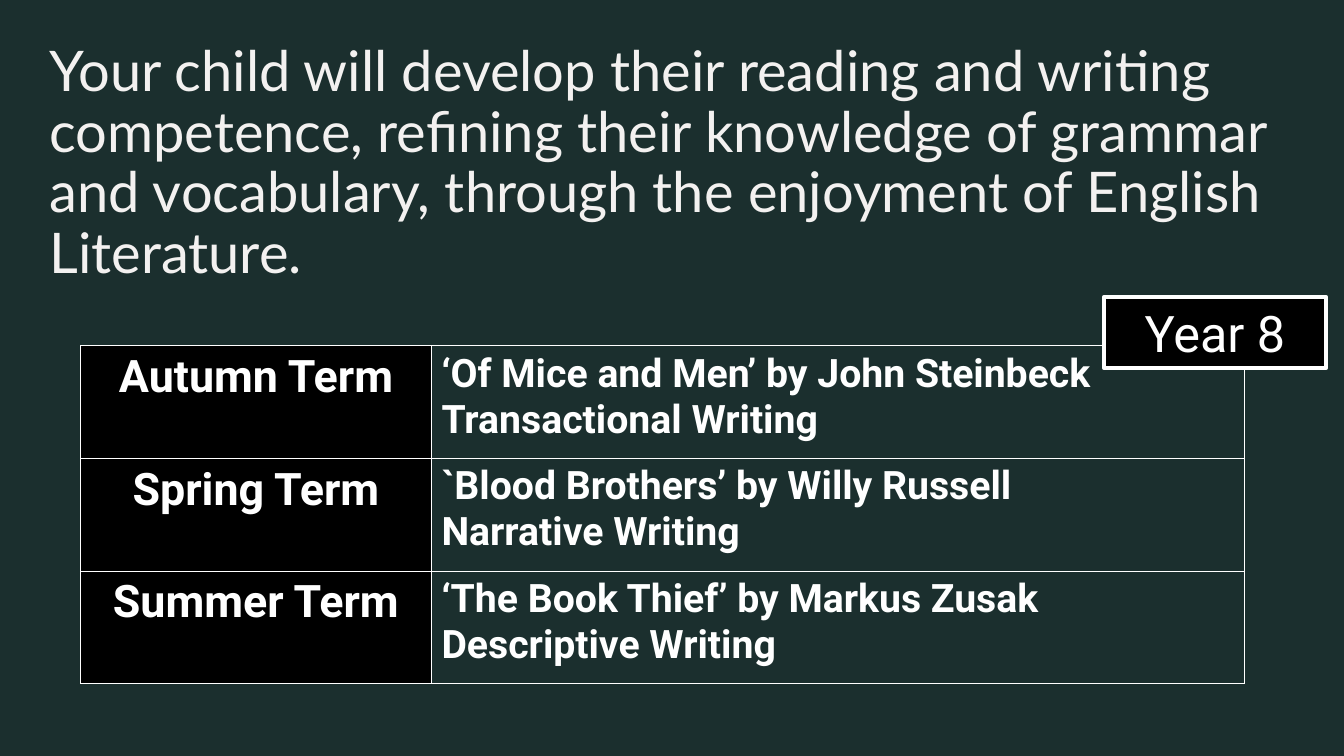
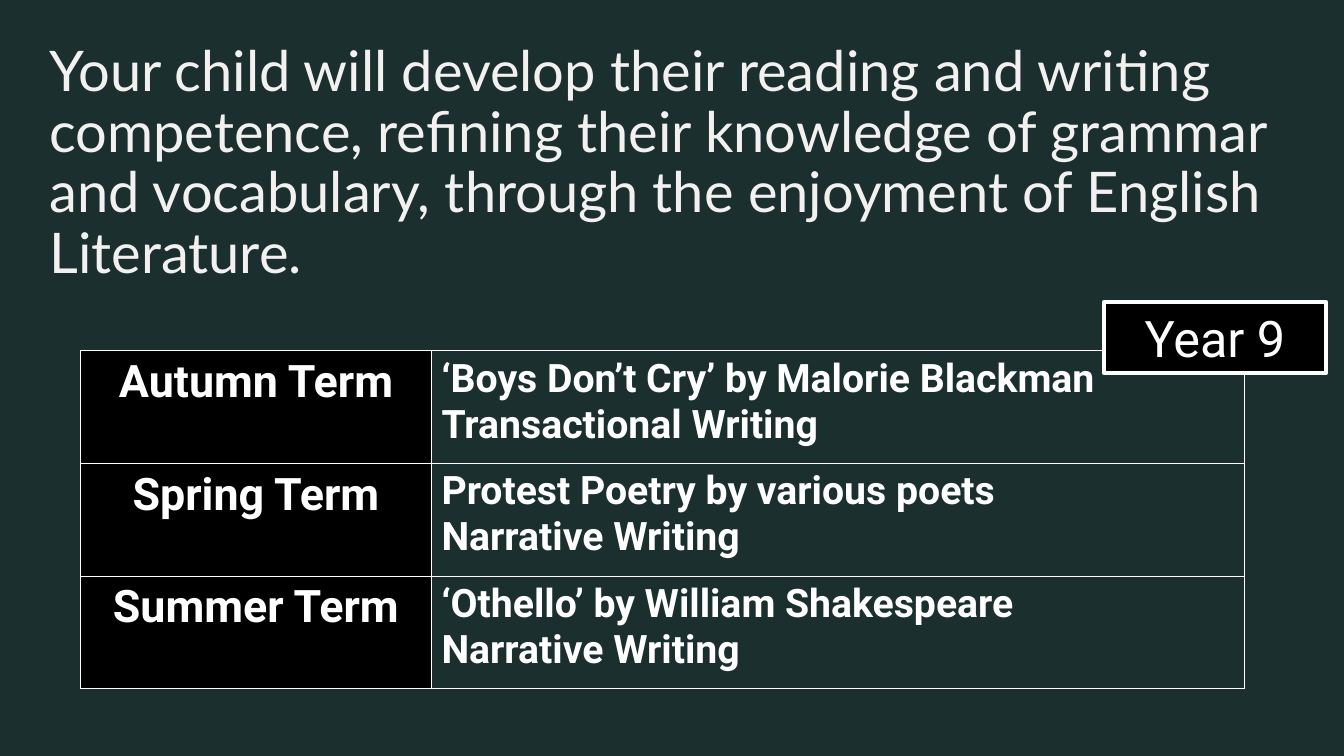
"""Build two slides that set out the English curriculum for Years 8 and 9."""
from lxml import etree
from pptx import Presentation
from pptx import util as u
from pptx.dml.color import RGBColor
from pptx.enum import shapes, text
from pptx.oxml import ns

BACKGROUND, CREAM, WHITE, BLACK = "1B2F2E", "F3F1F0", "FFFFFF", "000000"
FORMATS = {
    "title": {"name": "Lato", "size": u.Pt(40), "bold": False},
    "term": {"name": "Roboto", "size": u.Pt(32), "bold": True},
    "topic": {"name": "Roboto", "size": u.Pt(28), "bold": True},
    "badge": {"name": "Roboto", "size": u.Pt(36), "bold": False},
}
INTRODUCTION = (
    "Your child will develop their reading and writing competence, "
    "refining their knowledge of grammar and vocabulary, "
    "through the enjoyment of English Literature."
)
TERMS = ["Autumn Term", "Spring Term", "Summer Term"]
YEARS = [
    ("Year 8", 212.4, [
        ["‘Of Mice and Men’ by John Steinbeck", "Transactional Writing"],
        ["`Blood Brothers’ by Willy Russell", "Narrative Writing"],
        ["‘The Book Thief’ by Markus Zusak", "Descriptive Writing"],
    ]),
    ("Year 9", 216, [
        ["‘Boys Don’t Cry’ by Malorie Blackman", "Transactional Writing"],
        ["Protest Poetry by various poets", "Narrative Writing"],
        ["‘Othello’ by William Shakespeare", "Narrative Writing"],
    ]),
]
COLUMN_WIDTHS = [250.6, 581]
ROW_HEIGHT = 80.5
TABLE_DROP = 34.6


def paint(color_format, value):
    """Give a fill or a font a solid colour from a hex string."""
    if hasattr(color_format, "solid") and not hasattr(color_format, "size"):
        color_format.solid()
        color_format.fore_color.rgb = RGBColor.from_string(value)
    else:
        color_format.color.rgb = RGBColor.from_string(value)


def write(frame, lines, style, color=WHITE, align=text.PP_ALIGN.LEFT):
    """Fill a text frame with one formatted paragraph for each line."""
    frame.word_wrap = True
    for index, line in enumerate(lines):
        para = frame.add_paragraph() if index else frame.paragraphs[0]
        para.alignment = align
        span = para.add_run()
        span.text = line
        for key, value in FORMATS[style].items():
            setattr(span.font, key, value)
        paint(span.font, color)


deck = Presentation()
deck.slide_width, deck.slide_height = u.Pt(960), u.Pt(540)
paint(deck.slide_master.background.fill, BACKGROUND)

for year, badge_top, topics in YEARS:
    page = deck.slides.add_slide(deck.slide_layouts[6])

    title = page.shapes.add_textbox(u.Pt(35.5), u.Pt(31), u.Pt(889), u.Pt(203))
    for side in ("left", "top", "right", "bottom"):
        setattr(title.text_frame, f"margin_{side}", 0)
    write(title.text_frame, [INTRODUCTION], "title", CREAM)
    title.text_frame.paragraphs[0].line_spacing = 0.9

    table = page.shapes.add_table(
        len(TERMS), len(COLUMN_WIDTHS),
        u.Pt(57.6), u.Pt(badge_top + TABLE_DROP),
        u.Pt(sum(COLUMN_WIDTHS)), u.Pt(ROW_HEIGHT * len(TERMS)),
    ).table
    table.first_row = table.horz_banding = False
    for column, width in zip(table.columns, COLUMN_WIDTHS):
        column.width = u.Pt(width)
    for row, term, lines in zip(table.rows, TERMS, topics):
        row.height = u.Pt(ROW_HEIGHT)
        term_cell, topic_cell = row.cells
        write(term_cell.text_frame, [term], "term", align=text.PP_ALIGN.CENTER)
        paint(term_cell.fill, BLACK)
        write(topic_cell.text_frame, lines, "topic")
        topic_cell.fill.background()
        for cell in (term_cell, topic_cell):
            properties = cell._tc.get_or_add_tcPr()
            for index, edge in enumerate(("a:lnL", "a:lnR", "a:lnT", "a:lnB")):
                border = etree.Element(ns.qn(edge), w=str(u.Pt(1)))
                fill = etree.SubElement(border, ns.qn("a:solidFill"))
                etree.SubElement(fill, ns.qn("a:srgbClr"), val=WHITE)
                properties.insert(index, border)

    badge = page.shapes.add_shape(
        shapes.MSO_SHAPE.RECTANGLE,
        u.Pt(788.4), u.Pt(badge_top), u.Pt(159), u.Pt(50.4),
    )
    badge.shadow.inherit = False
    paint(badge.fill, BLACK)
    paint(badge.line, WHITE)
    badge.line.width = u.Pt(3)
    badge.text_frame.vertical_anchor = text.MSO_ANCHOR.MIDDLE
    write(badge.text_frame, [year], "badge", align=text.PP_ALIGN.CENTER)

deck.save("out.pptx")
